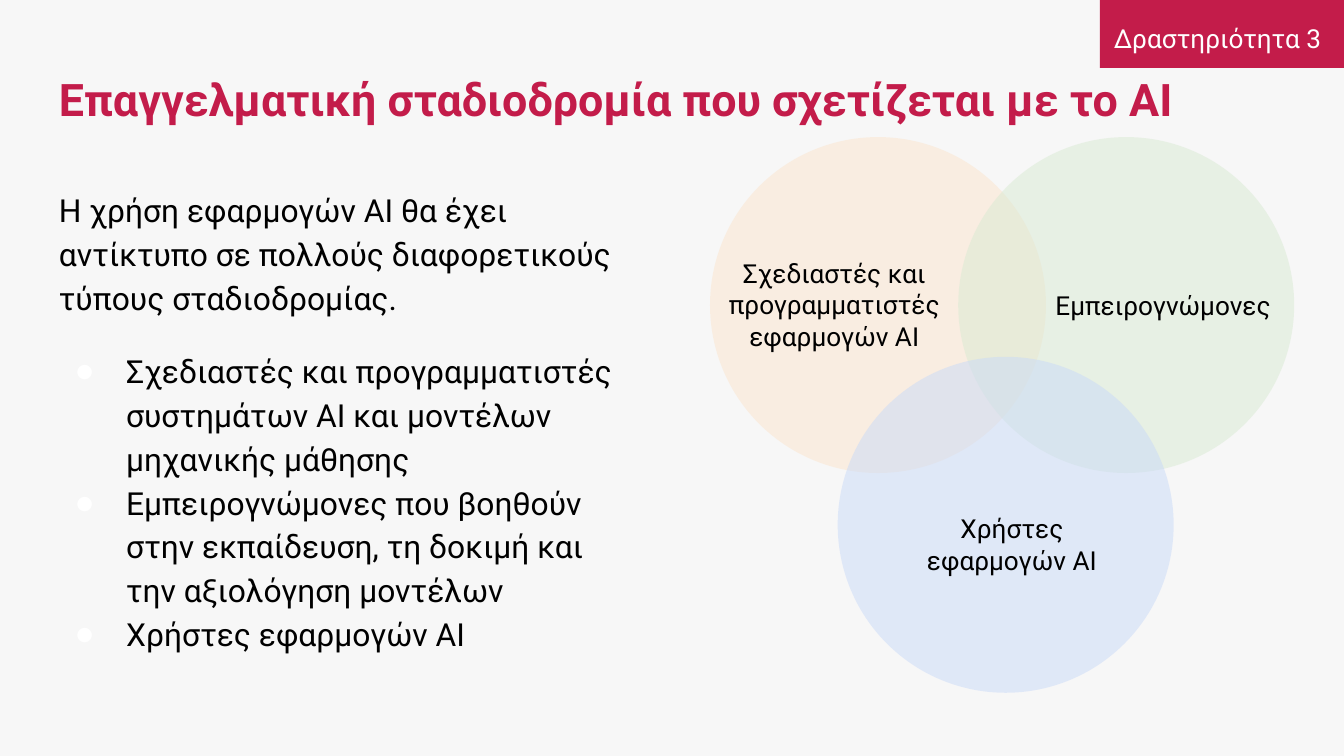
from lxml import etree
from pptx import Presentation
from pptx import util as u
from pptx.dml.color import RGBColor
from pptx.enum import shapes, text
from pptx.oxml.ns import qn

WIDE = u.Inches(10)
HIGH = u.Emu(WIDE * 9 // 16)
CELL = WIDE / 100
FONT = "Roboto"
RED, BLACK, WHITE = "C31C4A", "000000", "FFFFFF"
MID = text.PP_ALIGN.CENTER


def tint(fill, color):
    """Make a fill solid in a hex colour."""
    fill.solid()
    fill.fore_color.rgb = RGBColor.from_string(color)


def grid(*cells):
    """Turn grid columns and rows into slide lengths."""
    return [u.Emu(round(n * CELL)) for n in cells]


def add_form(slide, kind, place, color, alpha=100):
    """Draw a plain filled shape, see-through if alpha is below 100."""
    form = slide.shapes.add_shape(kind, *grid(*place))
    form.shadow.inherit = False
    form.line.fill.background()
    tint(form.fill, color)
    if alpha < 100:
        tone = form.fill._xPr.find(".//" + qn("a:srgbClr"))
        etree.SubElement(tone, qn("a:alpha"), val=str(alpha * 1000))


def add_box(slide, place, anchor=text.MSO_ANCHOR.TOP):
    """Add an empty wrapping text box and return its frame."""
    frame = slide.shapes.add_textbox(*grid(*place)).text_frame
    frame.word_wrap = True
    frame.vertical_anchor = anchor
    frame.margin_left = frame.margin_right = u.Inches(0.1)
    frame.margin_top = frame.margin_bottom = u.Inches(0.1)
    return frame


def add_run(para, words, size, color=BLACK, bold=False):
    """Add one run of styled text."""
    run = para.add_run()
    run.text = words
    run.font.name = FONT
    run.font.size = u.Pt(size)
    run.font.bold = bold
    tint(run.font.fill, color)


def add_dot(para, color):
    """Give a paragraph a small hanging round bullet."""
    props = para._p.get_or_add_pPr()
    props.set("marL", str(u.Inches(0.5)))
    props.set("indent", str(u.Inches(-0.37)))
    tone = etree.SubElement(props, qn("a:buClr"))
    etree.SubElement(tone, qn("a:srgbClr"), val=color)
    etree.SubElement(props, qn("a:buSzPct"), val="60000")
    etree.SubElement(props, qn("a:buFont"), typeface=FONT)
    etree.SubElement(props, qn("a:buChar"), char="●")


def add_body(slide, place, intro, items):
    """Write the lead paragraph and its bullet list."""
    frame = add_box(slide, place)
    lead = frame.paragraphs[0]
    lead.line_spacing = 1.15
    add_run(lead, intro, 17)
    for i, item in enumerate(items):
        para = frame.add_paragraph()
        para.line_spacing = 1.15
        para.space_before = u.Pt(0 if i else 16)
        add_dot(para, WHITE)
        add_run(para, item, 17)


def add_label(slide, place, words, color=BLACK, space=1.0):
    """Write a centred label."""
    para = add_box(slide, place).paragraphs[0]
    para.alignment = MID
    para.line_spacing = space
    add_run(para, words, 14, color)


def add_venn(slide, sets):
    """Draw equal circles first, then their labels on top."""
    for spot, color, _, _ in sets:
        add_form(slide, shapes.MSO_SHAPE.OVAL, (*spot, 25, 25), color, 50)
    for _, _, place, words in sets:
        add_label(slide, place, words)


def main():
    """Build and save the careers slide."""
    deck = Presentation()
    deck.slide_width, deck.slide_height = WIDE, HIGH
    slide = deck.slides.add_slide(deck.slide_layouts[6])
    tint(slide.background.fill, "F7F7F7")

    add_form(slide, shapes.MSO_SHAPE.RECTANGLE, (81.83, 0, 18.17, 5.05), RED)
    add_body(
        slide, (3.4, 12.8, 44.8, 40),
        "Η χρήση εφαρμογών AI θα έχει αντίκτυπο σε πολλούς "
        "διαφορετικούς τύπους σταδιοδρομίας.",
        ["Σχεδιαστές και προγραμματιστές συστημάτων AI και μοντέλων "
         "μηχανικής μάθησης",
         "Εμπειρογνώμονες που βοηθούν στην εκπαίδευση, τη δοκιμή και "
         "την αξιολόγηση μοντέλων",
         "Χρήστες εφαρμογών AI"])
    title = add_box(slide, (3.4, 3.55, 93.2, 7.6), text.MSO_ANCHOR.MIDDLE)
    add_run(title.paragraphs[0],
            "Επαγγελματική σταδιοδρομία που σχετίζεται με το AI",
            24, RED, True)
    add_venn(slide, [
        ((52.83, 10.2), "FCE5CD", (52.83, 18.15, 18.5, 9.1),
         "Σχεδιαστές και προγραμματιστές εφαρμογών AI"),
        ((71.3, 10.2), "D9EAD3", (77.3, 20.55, 18.5, 4.4),
         "Εμπειρογνώμονες"),
        ((62.33, 26.55), "C9DAF8", (66.3, 37.15, 18, 6.7),
         "Χρήστες εφαρμογών AI"),
    ])
    add_label(slide, (81.8, 0.3, 17.6, 4.2), "Δραστηριότητα 3", WHITE, 1.15)
    deck.save("out.pptx")


if __name__ == "__main__":
    main()
